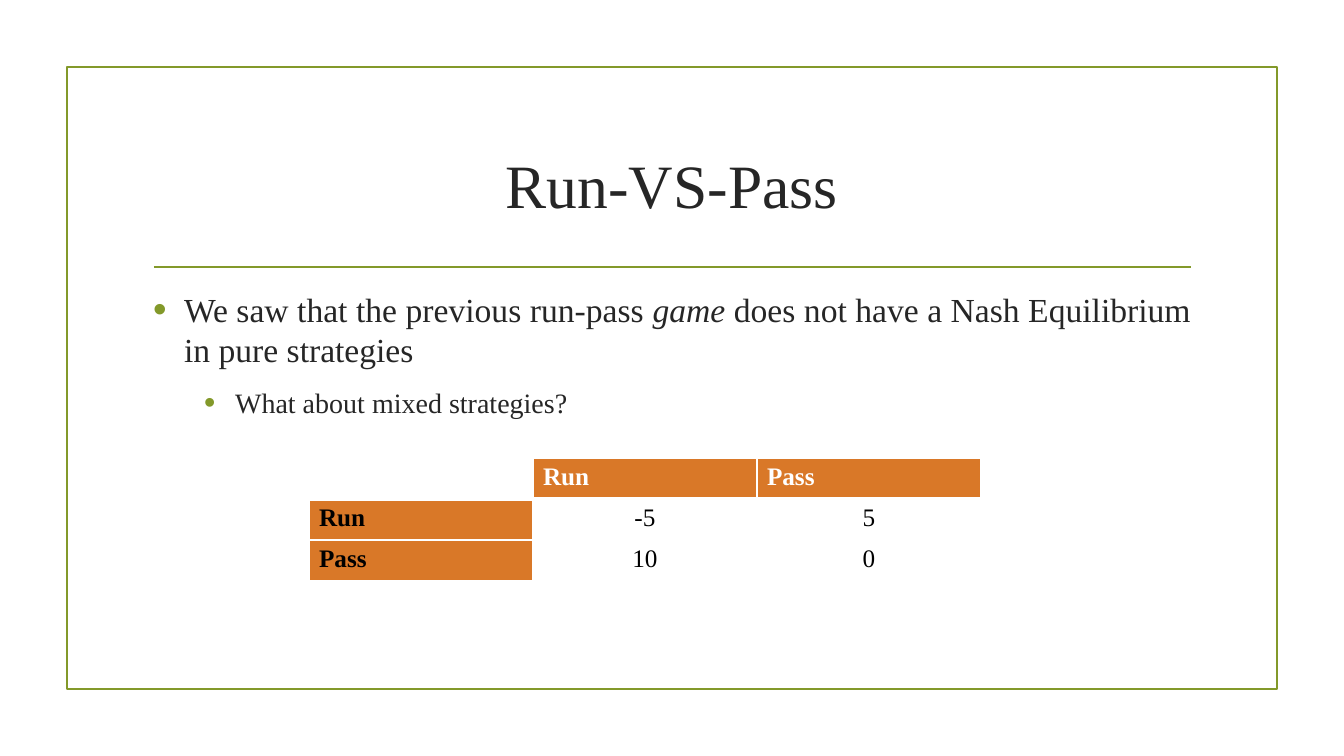
from dataclasses import dataclass

from lxml.etree import SubElement
from pptx import Presentation
from pptx.dml.color import RGBColor as RGB
from pptx.enum.shapes import MSO_CONNECTOR as LINK, MSO_SHAPE as SHAPE
from pptx.enum.text import MSO_ANCHOR as ANCHOR, PP_ALIGN as ALIGN
from pptx.oxml.ns import qn
from pptx.util import Pt

SCALE = 914400 / 100.8


@dataclass(frozen=True)
class Theme:
    face: str = "Times New Roman"
    ink: str = "262626"
    black: str = "000000"
    white: str = "FFFFFF"
    green: str = "83992A"
    orange: str = "D97828"
    title: int = 44
    body: tuple = (24, 20)
    cell: int = 18
    rule: float = 1.25


THEME = Theme()
GRID = [["", "Run", "Pass"], ["Run", "-5", "5"], ["Pass", "10", "0"]]


def px(num):
    return round(num * SCALE)


def style(para, size, color, bold=False):
    font = para.font
    font.name, font.size, font.bold = THEME.face, Pt(size), bold
    font.color.rgb = RGB.from_string(color)


def place(shape, left, top, width, height):
    """Move a placeholder and bring it to the front."""
    shape.left, shape.top = px(left), px(top)
    shape.width, shape.height = px(width), px(height)
    shape.element.getparent().append(shape.element)


def pen(line):
    line.color.rgb = RGB.from_string(THEME.green)
    line.width = Pt(THEME.rule)


def add_frame(slide, left, top, width, height):
    frame = slide.shapes.add_shape(
        SHAPE.RECTANGLE, px(left), px(top), px(width), px(height))
    frame.shadow.inherit = False
    frame.fill.solid()
    frame.fill.fore_color.rgb = RGB.from_string(THEME.white)
    pen(frame.line)


def add_rule(slide, left, right, top):
    rule = slide.shapes.add_connector(
        LINK.STRAIGHT, px(left), px(top), px(right), px(top))
    pen(rule.line)
    SubElement(rule.element.spPr, qn("a:effectLst"))


def set_title(title, text):
    place(title, 143, 108, 1058, 151)
    title.text_frame.text = text
    title.text_frame.vertical_anchor = ANCHOR.MIDDLE
    para = title.text_frame.paragraphs[0]
    para.alignment = ALIGN.CENTER
    style(para, THEME.title, THEME.ink)


def set_bullet(para, indent):
    props = para._p.get_or_add_pPr()
    props.set("marL", str(px(indent)))
    props.set("indent", str(px(-31)))
    color = SubElement(props, qn("a:buClr"))
    SubElement(color, qn("a:srgbClr"), val=THEME.green)
    SubElement(props, qn("a:buSzPct"), val="115000")
    SubElement(props, qn("a:buFont"), typeface="Arial")
    SubElement(props, qn("a:buChar"), char="•")


def add_item(para, level, *texts):
    """Fill a bullet; every second text is italic."""
    para.level = level
    set_bullet(para, 31 + 51 * level)
    para.alignment = ALIGN.LEFT if level else ALIGN.JUSTIFY
    para.space_before, para.space_after = Pt(5 * level), Pt(6)
    style(para, THEME.body[level], THEME.ink)
    for i, text in enumerate(texts):
        run = para.add_run()
        run.text = text
        if i % 2:
            run.font.italic = True


def set_body(body):
    place(body, 143, 284, 1058, 364)
    frame = body.text_frame
    add_item(frame.paragraphs[0], 0, "We saw that the previous run-pass ",
             "game", " does not have a Nash Equilibrium in pure strategies")
    add_item(frame.add_paragraph(), 1, "What about mixed strategies?")


def set_edges(cell, row):
    """Draw white borders, thick between the header and the rows."""
    thick = {"B": 3} if row == 0 else {"T": 3} if row == 1 else {}
    props = cell._tc.get_or_add_tcPr()
    for side in "LRTB":
        edge = SubElement(props, qn("a:ln" + side), w=str(Pt(thick.get(side, 1))))
        fill = SubElement(edge, qn("a:solidFill"))
        SubElement(fill, qn("a:srgbClr"), val=THEME.white)


def set_cell(cell, text, row, col):
    head = row == 0 or col == 0
    set_edges(cell, row)
    if head and text:
        cell.fill.solid()
        cell.fill.fore_color.rgb = RGB.from_string(THEME.orange)
    else:
        cell.fill.background()
    cell.text = text
    para = cell.text_frame.paragraphs[0]
    para.alignment = ALIGN.LEFT if head else ALIGN.CENTER
    style(para, THEME.cell, THEME.black if row else THEME.white, head)


def add_grid(slide, left, top, wide, high):
    rows, cols = len(GRID), len(GRID[0])
    table = slide.shapes.add_table(
        rows, cols, px(left), px(top), px(wide * cols), px(high * rows)).table
    table.first_row = table.horz_banding = False
    for r, line in enumerate(GRID):
        for c, text in enumerate(line):
            set_cell(table.cell(r, c), text, r, c)


def main():
    deck = Presentation()
    deck.slide_width, deck.slide_height = px(1344), px(756)
    slide = deck.slides.add_slide(deck.slide_layouts[1])
    add_frame(slide, 67, 67, 1210, 622)
    add_rule(slide, 154, 1191, 267)
    set_title(slide.shapes.title, "Run-VS-Pass")
    set_body(slide.placeholders[1])
    add_grid(slide, 309, 458, 224, 41)
    deck.save("out.pptx")


if __name__ == "__main__":
    main()
